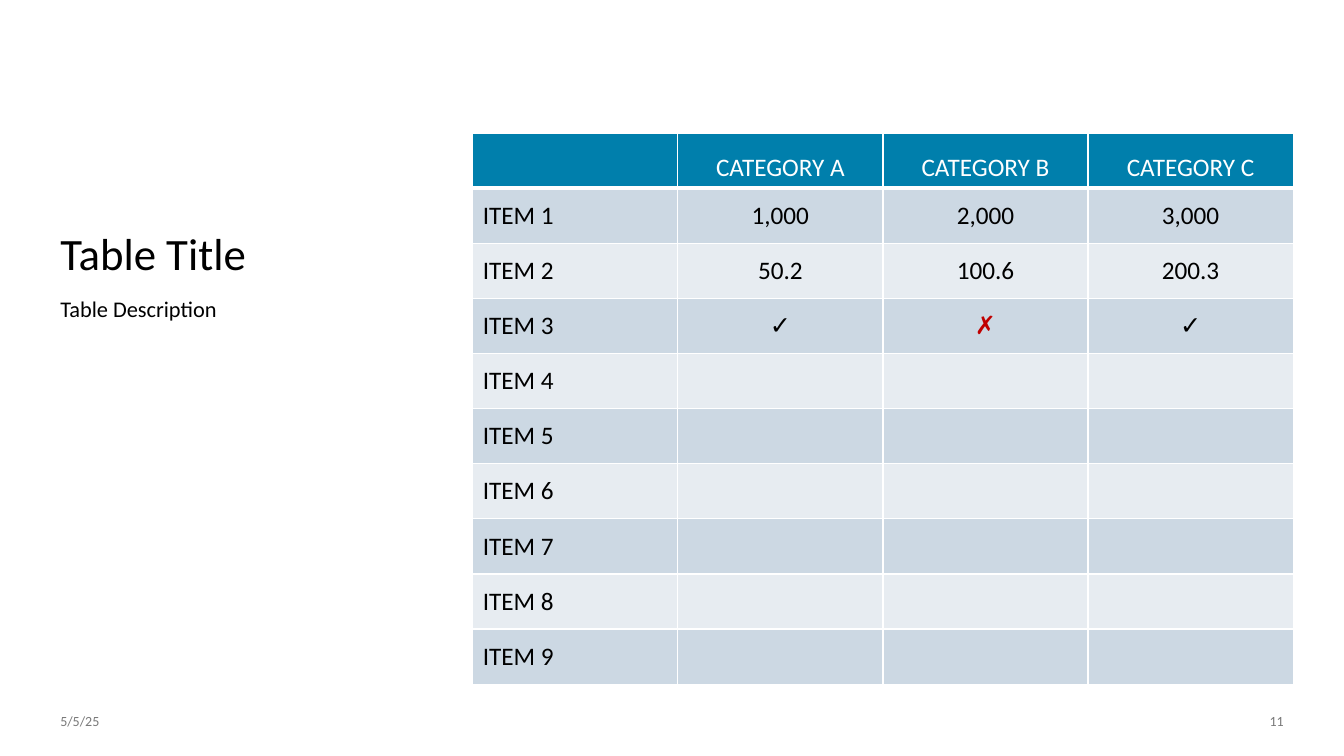
from lxml import etree
from pptx import Presentation
from pptx.dml import color
from pptx.enum import text
from pptx.oxml import ns
from pptx.util import Pt

FONT = "Calibri"
BLACK, WHITE, GRAY, RED = "000000", "FFFFFF", "797979", "C00000"
HEADER_FILL, BAND_FILLS = "007FAC", ("CCD8E3", "E7ECF1")
LEFT, CENTER, RIGHT = text.PP_ALIGN.LEFT, text.PP_ALIGN.CENTER, text.PP_ALIGN.RIGHT
TOP, MIDDLE, BOTTOM = text.MSO_ANCHOR.TOP, text.MSO_ANCHOR.MIDDLE, text.MSO_ANCHOR.BOTTOM

COLUMN_WIDTH, ROW_HEIGHT = 146.5, 39.4
HEADER = ["", "CATEGORY A", "CATEGORY B", "CATEGORY C"]
VALUES = [
    ["1,000", "2,000", "3,000"],
    ["50.2", "100.6", "200.3"],
    ["✓", "✗", "✓"],
]


def rgb(value):
    return color.RGBColor.from_string(value)


def write(p, words, size, ink, align):
    p.alignment = align
    p.font.name = FONT
    p.font.size = Pt(size)
    p.font.color.rgb = rgb(ink)
    if words:
        p.add_run().text = words


def add_text(slide, box, words, size, ink=BLACK, align=LEFT, anchor=TOP, spacing=1.0):
    tf = slide.shapes.add_textbox(*map(Pt, box)).text_frame
    tf.word_wrap = True
    tf.vertical_anchor = anchor
    p = tf.paragraphs[0]
    p.line_spacing = spacing
    write(p, words, size, ink, align)


def add_borders(cell, top, bottom):
    tc_pr = cell._tc.get_or_add_tcPr()
    sides = {"lnL": 1, "lnR": 1, "lnT": top, "lnB": bottom}
    for tag, width in sides.items():
        ln = etree.SubElement(tc_pr, ns.qn(f"a:{tag}"), w=str(Pt(width)))
        fill = etree.SubElement(ln, ns.qn("a:solidFill"))
        etree.SubElement(fill, ns.qn("a:srgbClr"), val=WHITE)


def fill_cell(cell, words, row, column):
    is_header = row == 0
    add_borders(cell, 3 if row == 1 else 1, 3 if is_header else 1)
    cell.fill.solid()
    cell.fill.fore_color.rgb = rgb(HEADER_FILL if is_header else BAND_FILLS[(row - 1) % 2])
    cell.vertical_anchor = BOTTOM if is_header else MIDDLE
    ink = WHITE if is_header else RED if words == "✗" else BLACK
    write(cell.text_frame.paragraphs[0], words, 18, ink, CENTER if column else LEFT)


def add_grid(slide, left, top, rows):
    columns = len(rows[0])
    table = slide.shapes.add_table(
        len(rows), columns, Pt(left), Pt(top),
        Pt(COLUMN_WIDTH * columns), Pt(ROW_HEIGHT * len(rows)),
    ).table
    for column in table.columns:
        column.width = Pt(COLUMN_WIDTH)
    for r, row in enumerate(rows):
        table.rows[r].height = Pt(ROW_HEIGHT)
        for c, words in enumerate(row):
            fill_cell(table.cell(r, c), words, r, c)


def main():
    prs = Presentation()
    prs.slide_width, prs.slide_height = Pt(960), Pt(540)
    slide = prs.slides.add_slide(prs.slide_layouts[6])

    items = [
        [f"ITEM {n + 1}"] + (VALUES[n] if n < len(VALUES) else [""] * 3)
        for n in range(9)
    ]
    add_text(slide, (36, 95, 282, 109), "Table Title", 32, anchor=BOTTOM, spacing=0.9)
    add_grid(slide, 337.7, 95, [HEADER] + items)
    add_text(slide, (36, 209.5, 282, 279.4), "Table Description", 16, spacing=0.9)
    add_text(slide, (36, 500.5, 246, 28.75), "5/5/25", 10, GRAY, anchor=MIDDLE)
    add_text(slide, (678, 500.5, 246, 28.75), "11", 10, GRAY, RIGHT, MIDDLE)

    prs.save("out.pptx")


if __name__ == "__main__":
    main()
